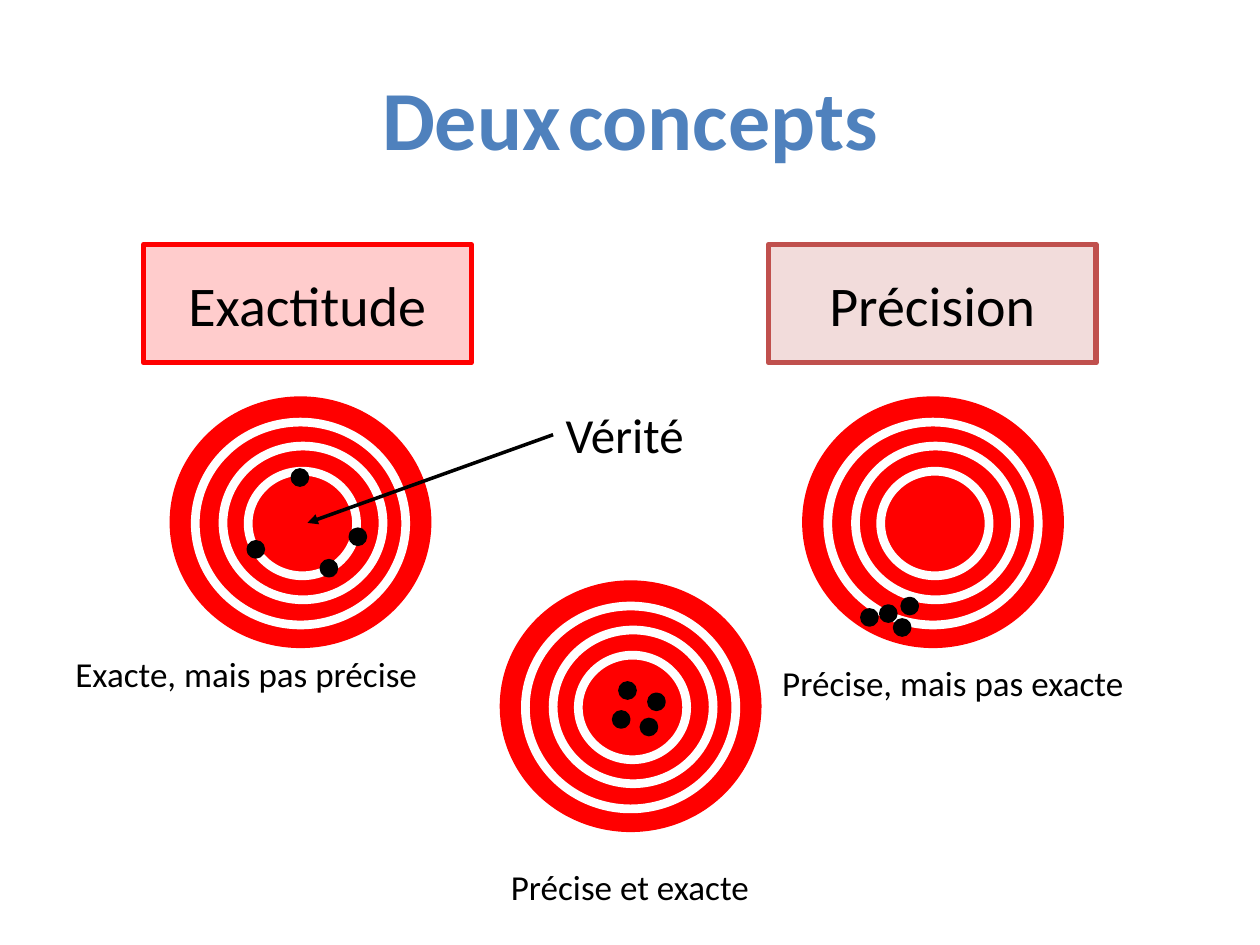
from dataclasses import dataclass

from pptx import Presentation
from pptx.dml.color import RGBColor
from pptx.enum.shapes import MSO_CONNECTOR as Connector, MSO_SHAPE as Shape
from pptx.enum.text import MSO_ANCHOR as Anchor, MSO_AUTO_SIZE as AutoSize, PP_ALIGN as Align
from pptx.oxml.ns import qn
from pptx.util import Pt
from lxml.etree import SubElement

EMU_PER_PX = 9144  # 100 px to the inch


@dataclass(frozen=True)
class Theme:
    font: str = "Calibri"
    title: str = "4F81BD"
    ink: str = "000000"
    red: str = "FF0000"
    brick: str = "C0504D"
    white: str = "FFFFFF"
    title_size: int = 48
    gap_size: int = 18
    heading_size: int = 32
    truth_size: int = 28
    caption_size: int = 20


THEME = Theme()
TARGET_SIZE = (205, 197)
RINGS = [(19, 19, 167, 161), (41, 38, 127, 122), (61, 58, 86, 83)]
DOT = 12

HEADINGS = [("Exactitude", THEME.red, 114), ("Précision", THEME.brick, 610)]
# Target corner, then the corner of each hit inside that target
TARGETS = [
    ((638, 316), [(46, 168), (72, 176), (78, 159), (61, 165)]),
    ((136, 316), [(142, 104), (119, 129), (61, 114), (96, 57)]),
    ((398, 462), [(94, 80), (111, 109), (89, 103), (117, 89)]),
]
CAPTIONS = [
    ("Exacte, mais pas précise", (50, 513), Align.LEFT),
    ("Précise, mais pas exacte", (611, 520), Align.LEFT),
    ("Précise et exacte", (326, 682), Align.CENTER),
]


def px(*lengths):
    return [length * EMU_PER_PX for length in lengths]


def color(code):
    return RGBColor.from_string(code)


def add_run(para, text, size, code=THEME.ink, bold=False):
    span = para.add_run()
    span.text = text
    font = span.font
    font.name, font.size, font.bold = THEME.font, Pt(size), bold
    font.color.rgb = color(code)


def add_shape(shapes, kind, box, fill, line, width):
    shape = shapes.add_shape(kind, *px(*box))
    shape.shadow.inherit = False
    if fill:
        shape.fill.solid()
        shape.fill.fore_color.rgb = color(fill)
    else:
        shape.fill.background()
    shape.line.color.rgb = color(line)
    shape.line.width = Pt(width)
    return shape


def add_label(shapes, box, text, size, align=Align.LEFT):
    label = shapes.add_textbox(*px(*box))
    frame = label.text_frame
    frame.word_wrap = True
    frame.auto_size = AutoSize.SHAPE_TO_FIT_TEXT
    para = frame.paragraphs[0]
    para.alignment = align
    add_run(para, text, size)


def fill_title(title, box):
    title.left, title.top, title.width, title.height = px(*box)
    title.text_frame.vertical_anchor = Anchor.MIDDLE
    para = title.text_frame.paragraphs[0]
    para.alignment = Align.CENTER
    add_run(para, "Deux", THEME.title_size, THEME.title, True)
    add_run(para, " ", THEME.gap_size)
    add_run(para, "concepts", THEME.title_size, THEME.title, True)


def add_heading(page, box, text, code):
    """Outlined box with a 20 % tint of its line colour."""
    heading = add_shape(page.shapes, Shape.RECTANGLE, box, code, code, 3)
    fill_color = heading.fill._xPr.find(qn("a:solidFill"))[0]
    SubElement(fill_color, qn("a:alpha"), val="20000")
    frame = heading.text_frame
    frame.word_wrap = False
    frame.vertical_anchor = Anchor.MIDDLE
    para = frame.paragraphs[0]
    para.alignment = Align.CENTER
    add_run(para, text, THEME.heading_size)


def add_target(page, box, hits):
    left, top = box[:2]
    rings = page.shapes.add_group_shape().shapes
    add_shape(rings, Shape.OVAL, box, THEME.red, THEME.red, 2)
    for x, y, width, height in RINGS:
        add_shape(rings, Shape.OVAL, (left + x, top + y, width, height), None, THEME.white, 5)
    for x, y in hits:
        add_shape(page.shapes, Shape.OVAL, (left + x, top + y, DOT, DOT), THEME.ink, THEME.ink, 2)


def add_truth(page, box):
    """Label with an arrow from its left edge to the bull's-eye."""
    left, top = box[:2]
    shapes = page.shapes.add_group_shape().shapes
    add_label(shapes, box, "Vérité", THEME.truth_size)
    arrow = shapes.add_connector(Connector.STRAIGHT, *px(left, top + 29, left - 195, top + 99))
    arrow.line.color.rgb = color(THEME.ink)
    arrow.line.width = Pt(2)
    SubElement(arrow.line._get_or_add_ln(), qn("a:tailEnd"), type="triangle")
    SubElement(arrow._element.spPr, qn("a:effectLst"))


def main():
    deck = Presentation()
    deck.slide_width, deck.slide_height = px(1000, 750)
    page = deck.slides.add_slide(deck.slide_layouts[5])
    fill_title(page.shapes.title, (50, 30, 900, 125))
    for text, code, left in HEADINGS:
        add_heading(page, (left, 194, 260, 94), text, code)
    for corner, hits in TARGETS:
        add_target(page, (*corner, *TARGET_SIZE), hits)
    add_truth(page, (439, 316, 127, 57))
    for text, corner, align in CAPTIONS:
        add_label(page.shapes, (*corner, 348, 44), text, THEME.caption_size, align)
    deck.save("out.pptx")


if __name__ == "__main__":
    main()
